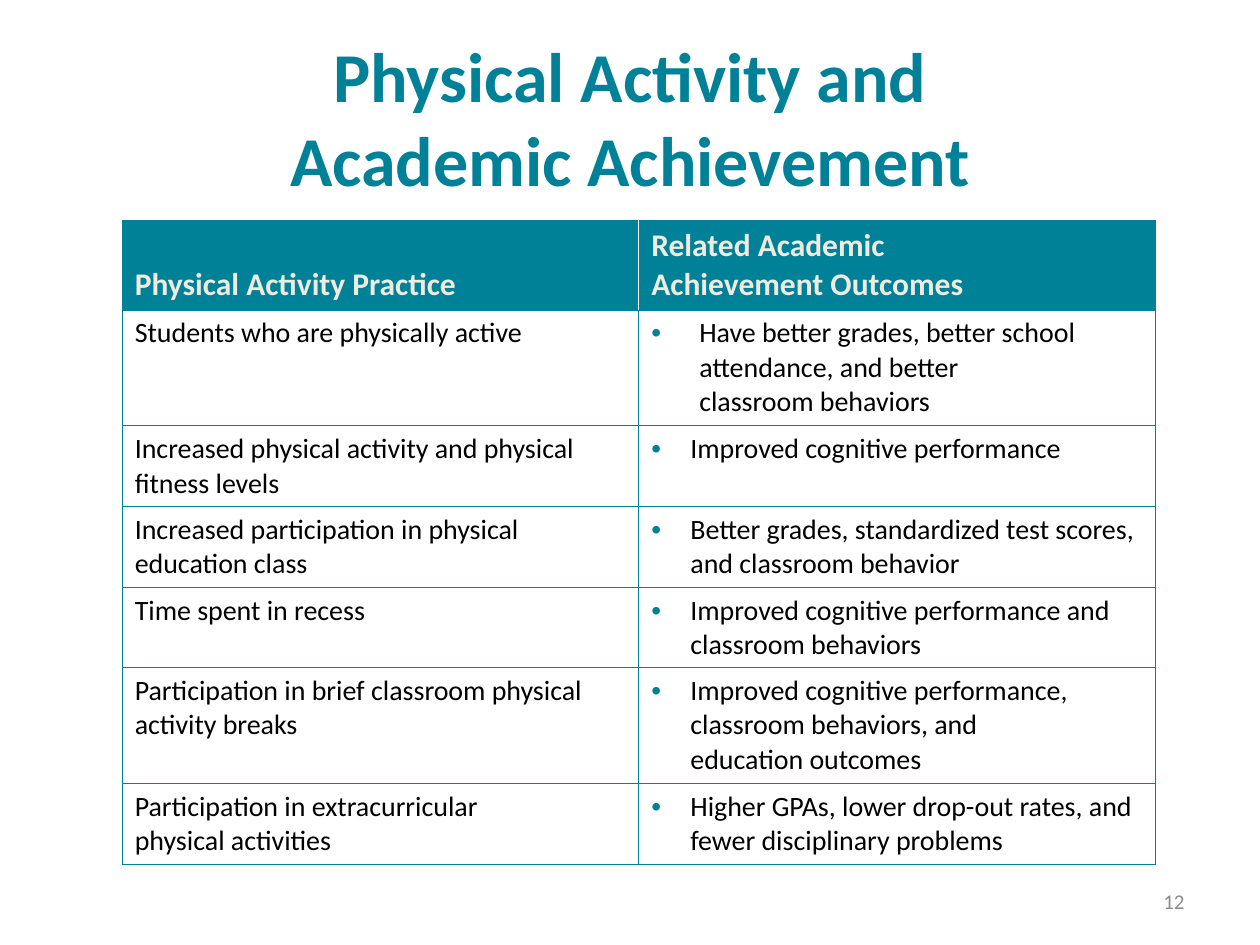
from dataclasses import dataclass

from lxml.etree import SubElement
from pptx import Presentation
from pptx.dml.color import RGBColor
from pptx.enum.text import MSO_ANCHOR, PP_ALIGN
from pptx.oxml.ns import qn
from pptx.util import Inches, Pt


@dataclass(frozen=True)
class Theme:
    font: str = "Calibri"
    teal: str = "008198"
    cream: str = "EEECE1"
    white: str = "FFFFFF"
    black: str = "000000"
    gray: str = "8C8C8C"
    title: int = 40
    head: int = 18
    body: int = 16
    note: int = 12
    rule: float = 0.5


THEME = Theme()

HEADS = ["Physical Activity Practice", "Related Academic \nAchievement Outcomes"]
# Practice, outcome, row height, bullet indent
ROWS = [
    ("Students who are physically active",
     "Have better grades, better school attendance, and better \nclassroom behaviors",
     0.92, 0.38),
    ("Increased physical activity and physical fitness levels",
     "Improved cognitive performance", 0.64, 0.31),
    ("Increased participation in physical education class",
     "Better grades, standardized test scores, and classroom behavior", 0.64, 0.31),
    ("Time spent in recess",
     "Improved cognitive performance and classroom behaviors", 0.64, 0.31),
    ("Participation in brief classroom physical activity breaks",
     "Improved cognitive performance, classroom behaviors, and \neducation outcomes",
     0.92, 0.31),
    ("Participation in extracurricular \nphysical activities",
     "Higher GPAs, lower drop-out rates, and fewer disciplinary problems", 0.64, 0.31),
]
HEAD_ROW = 0.71


def write(para, text, size, color, bold=False):
    for i, line in enumerate(text.split("\n")):
        if i:
            para.add_line_break()
        run = para.add_run()
        run.text = line
        font = run.font
        font.name, font.size, font.bold = THEME.font, Pt(size), bold
        font.color.rgb = RGBColor.from_string(color)


def label(slide, box, text, size, color, align, bold=False):
    frame = slide.shapes.add_textbox(*map(Inches, box)).text_frame
    frame.word_wrap = True
    frame.vertical_anchor = MSO_ANCHOR.MIDDLE
    para = frame.paragraphs[0]
    para.alignment = align
    write(para, text, size, color, bold)


def bullet(para, indent):
    props = para._p.get_or_add_pPr()
    props.set("marL", str(Inches(indent)))
    props.set("indent", str(-Inches(indent)))
    tint = SubElement(props, qn("a:buClr"))
    SubElement(tint, qn("a:srgbClr"), val=THEME.teal)
    SubElement(props, qn("a:buFont"), typeface="Arial")
    SubElement(props, qn("a:buChar"), char="•")


def style(cell, fill, edges):
    # Borders come before the fill in the cell properties
    props = cell._tc.get_or_add_tcPr()
    for side in "LRTB":
        line = SubElement(props, qn("a:ln" + side), w=str(Pt(THEME.rule)))
        paint = SubElement(line, qn("a:solidFill"))
        SubElement(paint, qn("a:srgbClr"), val=edges.get(side, THEME.teal))
    cell.fill.solid()
    cell.fill.fore_color.rgb = RGBColor.from_string(fill)


def grid(slide, box):
    frame = slide.shapes.add_table(len(ROWS) + 1, len(HEADS), *map(Inches, box))
    table = frame.table
    table.first_row = table.horz_banding = False
    for col in table.columns:
        col.width = Inches(box[2] / len(HEADS))

    # Header row, with a white rule between its cells
    table.rows[0].height = Inches(HEAD_ROW)
    for c, (text, side) in enumerate(zip(HEADS, "RL")):
        cell = table.cell(0, c)
        style(cell, THEME.teal, {side: THEME.white})
        cell.vertical_anchor = MSO_ANCHOR.BOTTOM
        write(cell.text_frame.paragraphs[0], text, THEME.head, THEME.cream, True)

    # Body rows, with bulleted outcomes
    for r, (practice, outcome, height, indent) in enumerate(ROWS, 1):
        table.rows[r].height = Inches(height)
        for c, text in enumerate((practice, outcome)):
            cell = table.cell(r, c)
            style(cell, THEME.white, {})
            para = cell.text_frame.paragraphs[0]
            if c:
                bullet(para, indent)
            write(para, text, THEME.body, THEME.black)


def main():
    deck = Presentation()
    deck.slide_width, deck.slide_height = Inches(10), Inches(7.5)
    slide = deck.slides.add_slide(deck.slide_layouts[6])

    # Title
    label(slide, (0.5, 0.3, 9, 1.25), "Physical Activity and\nAcademic Achievement",
          THEME.title, THEME.teal, PP_ALIGN.CENTER, True)
    # Table
    grid(slide, (0.97, 1.75, 8.2, 5.11))
    # Page number
    label(slide, (7.17, 6.95, 2.33, 0.4), "12", THEME.note, THEME.gray, PP_ALIGN.RIGHT)

    deck.save("out.pptx")


if __name__ == "__main__":
    main()
